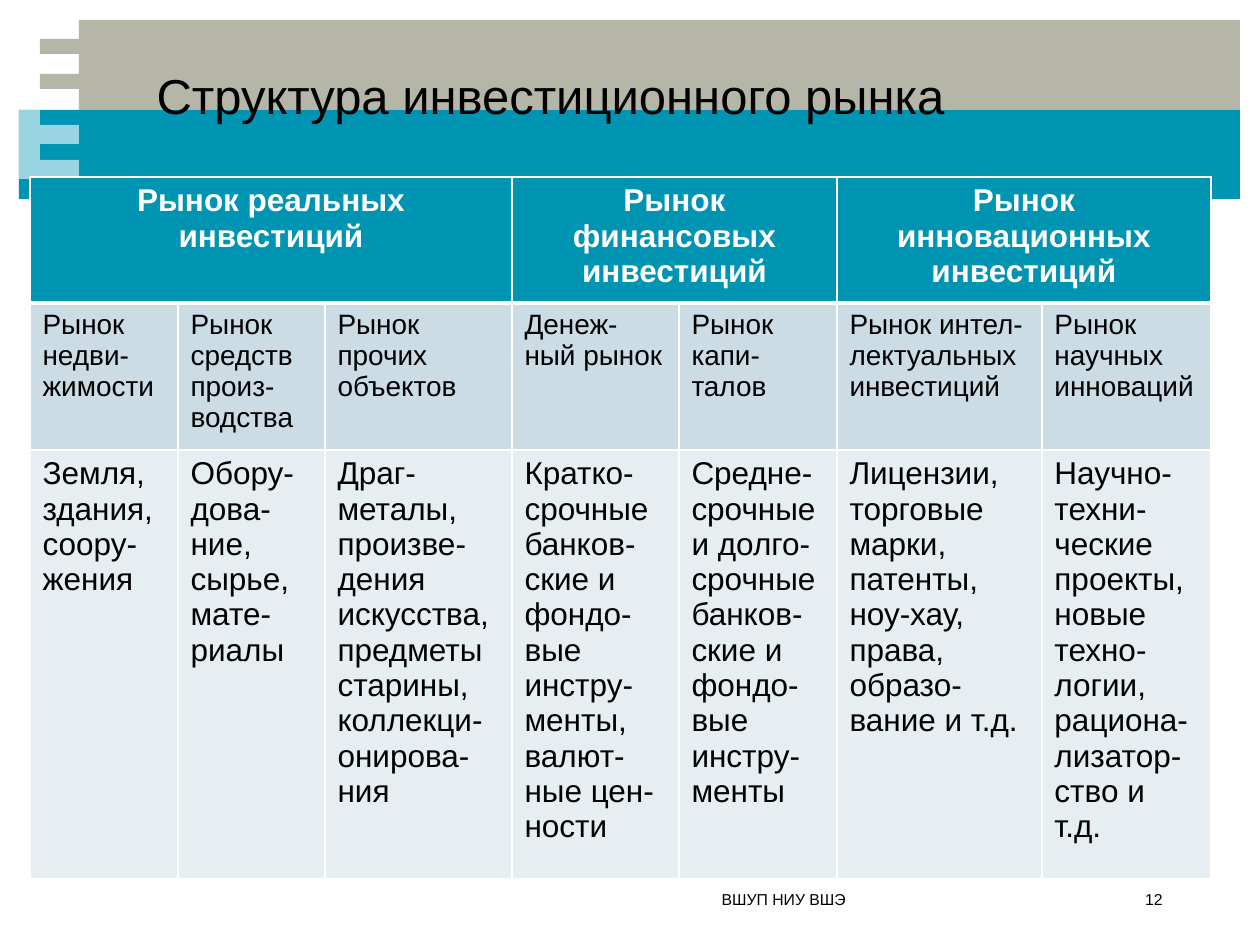
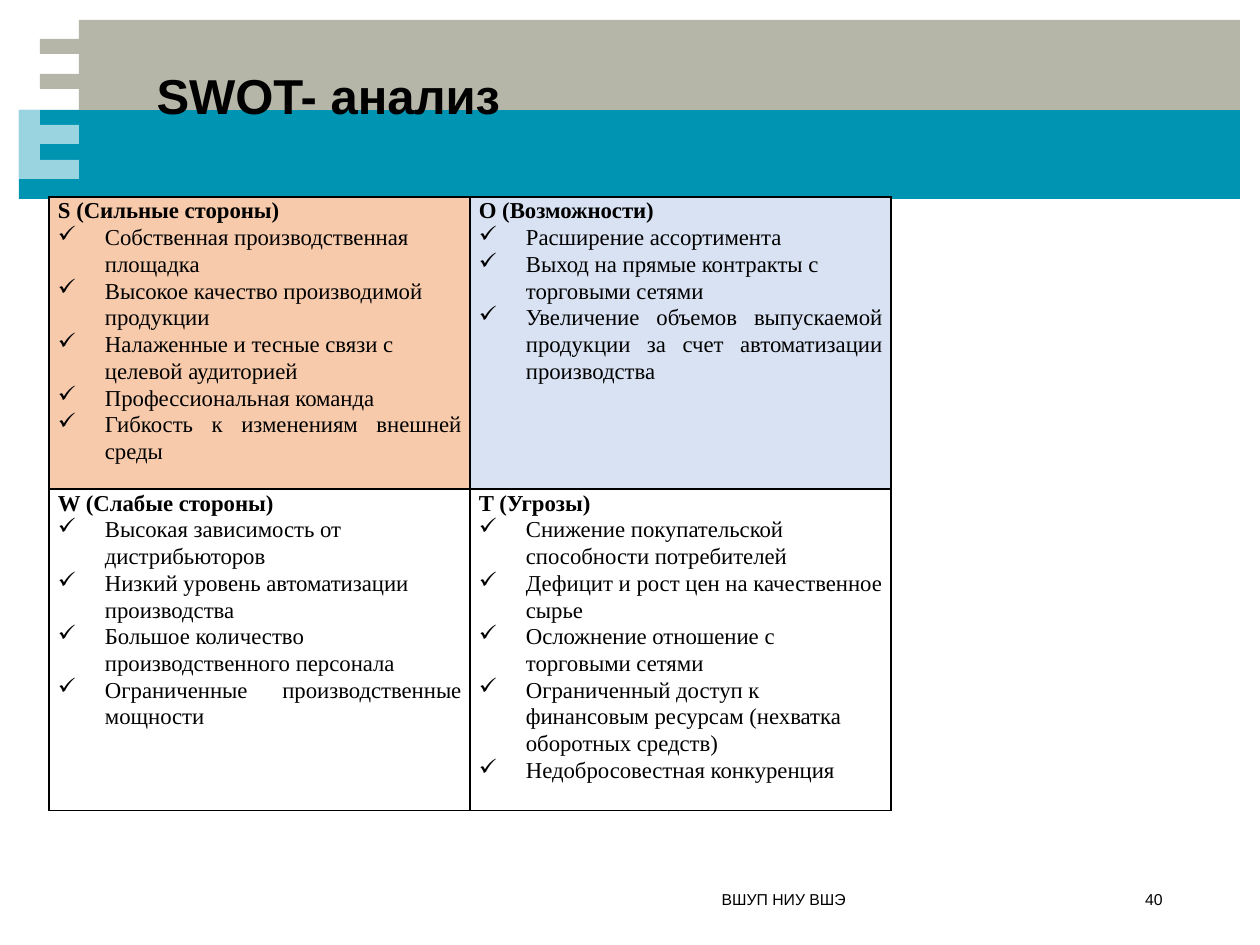
"""Build two slides on the investment market and a SWOT analysis."""
from lxml.etree import SubElement
from pptx import Presentation
from pptx.dml.color import RGBColor
from pptx.enum.shapes import MSO_SHAPE
from pptx.enum.text import MSO_ANCHOR, MSO_AUTO_SIZE, PP_ALIGN
from pptx.oxml.ns import qn
from pptx.util import Emu, Pt

SCALE = 914400 / 126
COLORS = {
    "black": "000000", "white": "FFFFFF", "teal": "0094B3", "stone": "B5B5A8",
    "segment": "CCDCE5", "example": "E7EEF2", "strength": "F7CAAC", "chance": "D9E2F3",
}
SLIDES = [("Структура инвестиционного рынка", False, "12"), ("SWOT- анализ", True, "40")]
STONE_COMB = [(79, 20), (1240, 20), (1240, 110), (79, 110), (79, 89), (40, 89),
              (40, 74), (79, 74), (79, 54), (40, 54), (40, 39), (79, 39)]
LIGHT_COMB = [(79, 179), (79, 160), (40, 160), (40, 144), (79, 144), (79, 125),
              (40, 125), (40, 110), (19, 110), (19, 179)]

MARKETS = [("Рынок реальных инвестиций", 3), ("Рынок финансовых инвестиций", 2),
           ("Рынок инновационных инвестиций", 2)]
SEGMENTS = [
    (148, "Рынок недви-жимости", "Земля, здания, соору-жения"),
    (147, "Рынок средств произ-водства", "Обору-дова-ние, сырье, мате-риалы"),
    (187, "Рынок прочих объектов",
     "Драг-металы, произве-дения искусства, предметы старины, коллекци-онирова-ния"),
    (167, "Денеж-ный рынок",
     "Кратко-срочные банков-ские и фондо-вые инстру-менты, валют-ные цен-ности"),
    (158, "Рынок капи-талов",
     "Средне-срочные и долго-срочные банков-ские и фондо-вые инстру-менты"),
    (205, "Рынок интел-лектуальных инвестиций",
     "Лицензии, торговые марки, патенты, ноу-хау, права, образо-вание и т.д."),
    (169, "Рынок научных инноваций",
     "Научно-техни-ческие проекты, новые техно-логии, рациона-лизатор-ство и т.д."),
]
MARKET_ROWS = [(119, "teal"), (137, "segment"), (401, "example")]

SWOT = [
    ("S (Сильные стороны)", "strength", True, [
        "Собственная производственная площадка",
        "Высокое качество производимой продукции",
        "Налаженные и тесные связи с целевой аудиторией",
        "Профессиональная команда",
        "Гибкость к изменениям внешней среды"]),
    ("О (Возможности)", "chance", True, [
        "Расширение ассортимента",
        "Выход на прямые контракты с торговыми сетями",
        "Увеличение объемов выпускаемой продукции за счет автоматизации производства"]),
    ("W (Слабые стороны)", None, True, [
        "Высокая зависимость от дистрибьюторов",
        "Низкий уровень автоматизации производства",
        "Большое количество производственного персонала",
        "Ограниченные производственные мощности"]),
    ("T (Угрозы)", None, False, [
        "Снижение покупательской способности потребителей",
        "Дефицит и рост цен на качественное сырье",
        "Осложнение отношение с торговыми сетями",
        "Ограниченный доступ к финансовым ресурсам (нехватка оборотных средств)",
        "Недобросовестная конкуренция"]),
]


def px(*lengths):
    """Turn px lengths into EMU."""
    return [Emu(round(length * SCALE)) for length in lengths]


def style(paragraph, size, bold=False, color="black", font="Arial", align=PP_ALIGN.LEFT):
    """Align a paragraph and format its runs."""
    paragraph.alignment = align
    for span in paragraph.runs:
        span.font.name, span.font.size, span.font.bold = font, Pt(size), bold
        span.font.color.rgb = RGBColor.from_string(COLORS[color])


deck = Presentation()
deck.slide_width, deck.slide_height = px(1260, 945)
pages = []
for heading, bold, number in SLIDES:
    page = deck.slides.add_slide(deck.slide_layouts[5])
    pages.append(page)
    band = page.shapes.add_shape(MSO_SHAPE.RECTANGLE, *px(19, 110, 1221, 89))
    combs = []
    for points in (STONE_COMB, LIGHT_COMB):
        builder = page.shapes.build_freeform(*points[0], scale=SCALE)
        builder.add_line_segments(points[1:], close=True)
        combs.append(builder.convert_to_shape())
    for shape, color in zip([band, *combs], ("teal", "stone", "white")):
        shape.shadow.inherit = False
        shape.line.fill.background()
        shape.fill.solid()
        shape.fill.fore_color.rgb = RGBColor.from_string(COLORS[color])
    light = combs[1].element.find(".//" + qn("a:solidFill"))
    SubElement(light[0], qn("a:alpha"), val="60000")

    title = page.shapes.title
    page.shapes.element.append(title.element)
    title.left, title.top, title.width, title.height = px(144, 54, 1032, 132)
    frame = title.text_frame
    frame.text = heading
    frame.auto_size = MSO_AUTO_SIZE.NONE
    frame.vertical_anchor = MSO_ANCHOR.TOP
    frame.margin_top, = px(11)
    style(frame.paragraphs[0], 28, bold)

    for left, width, label in ((144, 714, "ВШУП НИУ ВШЭ"), (1116, 59, number)):
        frame = page.shapes.add_textbox(*px(left, 890, width, 19)).text_frame
        frame.text = label
        frame.word_wrap = True
        frame.vertical_anchor = MSO_ANCHOR.MIDDLE
        frame.margin_top = frame.margin_bottom = 0
        style(frame.paragraphs[0], 9, align=PP_ALIGN.RIGHT)

market_page, swot_page = pages
market = market_page.shapes.add_table(3, 7, *px(30, 177, 1181, 657)).table
swot = swot_page.shapes.add_table(2, 2, *px(49, 197, 842, 561)).table
for table, widths, heights, color in (
        (market, [segment[0] for segment in SEGMENTS], [row[0] for row in MARKET_ROWS], "white"),
        (swot, [421, 421], [267, 294], "black")):
    table.first_row = table.horz_banding = False
    for column, width in zip(table.columns, px(*widths)):
        column.width = width
    for index, (row, height) in enumerate(zip(table.rows, px(*heights))):
        row.height = height
        for cell in row.cells:
            properties = cell._tc.get_or_add_tcPr()
            for side in "LRTB":
                thick = table is market and (index, side) in ((0, "B"), (1, "T"))
                line = SubElement(properties, qn(f"a:ln{side}"), w=str(Pt(3 if thick else 1)))
                fill = SubElement(line, qn("a:solidFill"))
                SubElement(fill, qn("a:srgbClr"), val=COLORS[color])

for row, (height, color) in zip(market.rows, MARKET_ROWS):
    for cell in row.cells:
        cell.fill.solid()
        cell.fill.fore_color.rgb = RGBColor.from_string(COLORS[color])
start = 0
for name, count in MARKETS:
    cell = market.cell(0, start)
    cell.merge(market.cell(0, start + count - 1))
    cell.text_frame.text = name
    style(cell.text_frame.paragraphs[0], 18, True, "white", align=PP_ALIGN.CENTER)
    start += count
for column, (width, *texts) in enumerate(SEGMENTS):
    for row, (text, size) in enumerate(zip(texts, (16, 18)), 1):
        frame = market.cell(row, column).text_frame
        frame.text = text
        style(frame.paragraphs[0], size)

indent, = px(47)
for index, (name, color, justified, points) in enumerate(SWOT):
    cell = swot.cell(*divmod(index, 2))
    cell.margin_left, cell.margin_right = px(9, 9)
    cell.margin_top = cell.margin_bottom = 0
    if color:
        cell.fill.solid()
        cell.fill.fore_color.rgb = RGBColor.from_string(COLORS[color])
    else:
        cell.fill.background()
    cell.text_frame.text = "\n".join([name, *points])
    for position, para in enumerate(cell.text_frame.paragraphs):
        last = position == len(points)
        if position:
            properties = para._p.get_or_add_pPr()
            properties.set("marL", str(indent))
            properties.set("indent", str(-indent))
            SubElement(properties, qn("a:buChar"), char="✓")
        para.line_spacing = 1.07
        style(para, 13, position == 0, font="Times New Roman",
              align=PP_ALIGN.JUSTIFY if last and justified else PP_ALIGN.LEFT)

deck.save("out.pptx")
